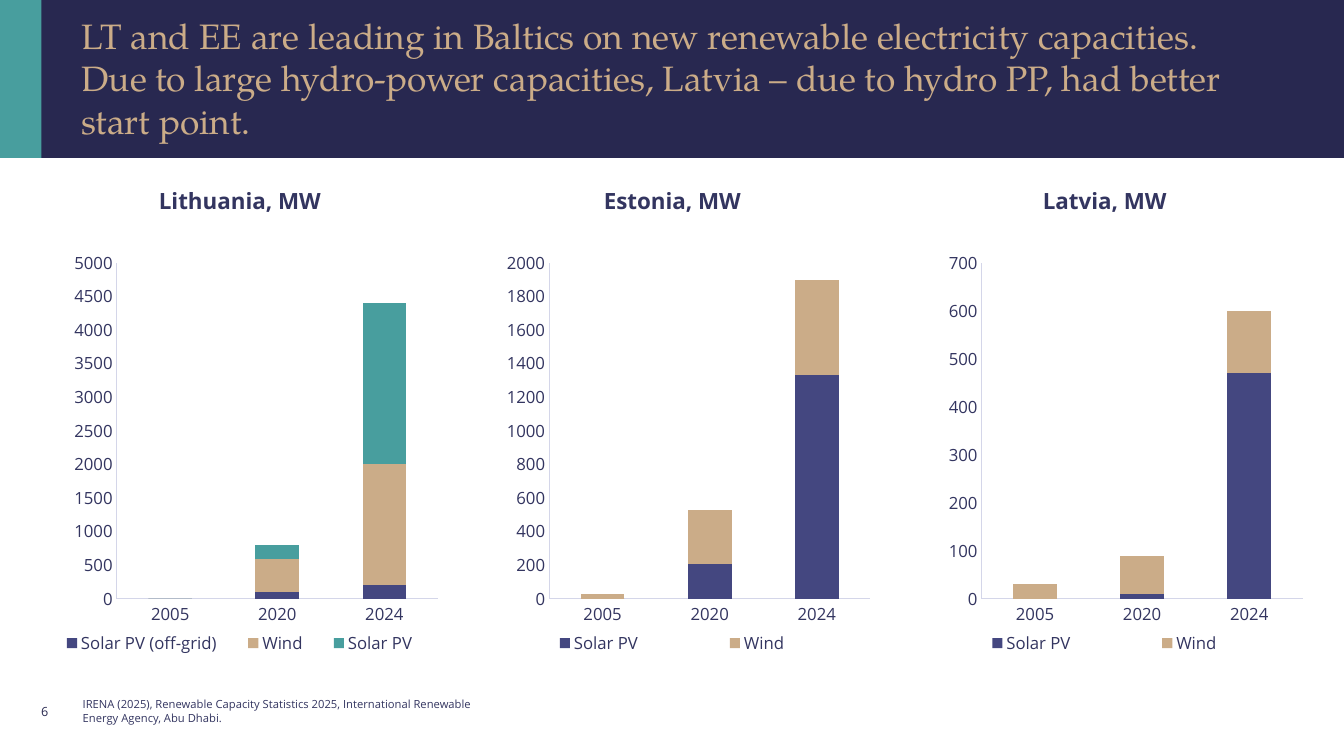
"""Build a slide comparing new renewable capacity in the three Baltic states."""
from lxml import etree
from pptx import Presentation
from pptx.chart.data import CategoryChartData
from pptx.dml.color import RGBColor
from pptx.enum.chart import XL_CHART_TYPE as ChartType, XL_LEGEND_POSITION as LegendPlace, XL_TICK_MARK as Tick
from pptx.enum.shapes import MSO_SHAPE as Preset
from pptx.enum.text import MSO_ANCHOR as Anchor, MSO_AUTO_SIZE as AutoSize, PP_ALIGN as Align
from pptx.oxml.ns import qn
from pptx.util import Pt

TITLE = ("LT and EE are leading in Baltics on new renewable electricity capacities. "
         "Due to large hydro-power capacities, Latvia – due to hydro PP, had better start point.")
SOURCE = ("IRENA (2025), Renewable Capacity Statistics 2025, "
          "International Renewable Energy Agency, Abu Dhabi.")
PAGE_NUMBER = "6"
YEARS = ("2005", "2020", "2024")
COUNTRIES = [
    ("Lithuania, MW", 5000, 500, [("Solar PV (off-grid)", (0, 100, 200)),
                                  ("Wind", (0, 500, 1800)),
                                  ("Solar PV", (0, 200, 2400))]),
    ("Estonia, MW", 2000, 200, [("Solar PV", (0, 210, 1330)), ("Wind", (30, 320, 570))]),
    ("Latvia, MW", 700, 100, [("Solar PV", (0, 10, 470)), ("Wind", (30, 80, 130))]),
]

NAVY, WHITE, TEAL, SAND = "282850", "FFFFFF", "489E9E", "CBAC88"
INK, AXIS = "333560", "D4D6E9"
SERIES_COLOURS = ("444780", SAND, TEAL)
BODY, SERIF = "Open Sans", "TeX Gyre Pagella"
WIDTH, HEIGHT, BAND = 960, 540, 113
LEFT, COLUMN, STEP = 29.5, 283.7, 308.9
PLOT_AREA = {"layoutTarget": "inner", "xMode": "edge", "yMode": "edge",
             "x": 0.19, "y": 0.04, "w": 0.81, "h": 0.8}
LEGEND_AREA = {"xMode": "edge", "yMode": "edge", "x": 0, "y": 0.9, "w": 1, "h": 0.09}


def colour(value):
    return RGBColor.from_string(value)


def apply(target, values):
    for name, value in values.items():
        setattr(target, name, value)


def set_font(font, size, ink=INK, face=BODY, bold=False):
    apply(font, {"size": Pt(size), "name": face, "bold": bold})
    font.color.rgb = colour(ink)


def put_text(box, words, size, spacing, align=Align.LEFT, anchor=Anchor.MIDDLE, **look):
    apply(box.text_frame, {"word_wrap": True, "auto_size": AutoSize.NONE, "vertical_anchor": anchor})
    para = box.text_frame.paragraphs[0]
    apply(para, {"alignment": align, "line_spacing": spacing, "space_before": Pt(0)})
    span = para.add_run()
    span.text = words
    set_font(span.font, size, **look)


def add_text(page, area, *args, **look):
    put_text(page.shapes.add_textbox(*map(Pt, area)), *args, **look)


def add_block(page, area, fill):
    block = page.shapes.add_shape(Preset.RECTANGLE, *map(Pt, area))
    block.shadow.inherit = False
    block.fill.solid()
    block.fill.fore_color.rgb = colour(fill)
    block.line.fill.background()


def place_part(chart, tag, position, settings):
    part = chart.element.find(".//" + qn(tag))
    for old in part.findall(qn("c:layout")):
        part.remove(old)
    layout = etree.Element(qn("c:layout"))
    part.insert(position, layout)
    manual = etree.SubElement(layout, qn("c:manualLayout"))
    for name, value in settings.items():
        etree.SubElement(manual, qn("c:" + name)).set("val", str(value))


def add_capacity_chart(page, left, top_value, unit, series):
    data = CategoryChartData(number_format="0")
    data.categories = YEARS
    for name, values in series:
        data.add_series(name, values)
    area = map(Pt, (left, 175.7, COLUMN, 300.2))
    chart = page.shapes.add_chart(ChartType.COLUMN_STACKED, *area, data).chart
    set_font(chart.font, 12)
    apply(chart, {"has_title": False, "has_legend": True})
    apply(chart.legend, {"position": LegendPlace.BOTTOM, "include_in_layout": False})
    set_font(chart.legend.font, 12)
    plot = chart.plots[0]
    apply(plot, {"gap_width": 146, "overlap": 100, "vary_by_categories": False})
    for bar, fill in zip(plot.series, SERIES_COLOURS):
        bar.format.fill.solid()
        bar.format.fill.fore_color.rgb = colour(fill)
    for axis in (chart.category_axis, chart.value_axis):
        apply(axis, {"has_major_gridlines": False, "major_tick_mark": Tick.NONE,
                     "minor_tick_mark": Tick.NONE})
        set_font(axis.tick_labels.font, 12)
        axis.format.line.width = Pt(0.75)
        axis.format.line.color.rgb = colour(AXIS)
    apply(chart.value_axis, {"minimum_scale": 0, "maximum_scale": top_value, "major_unit": unit})
    apply(chart.value_axis.tick_labels, {"number_format": "0", "number_format_is_linked": False})
    place_part(chart, "c:plotArea", 0, PLOT_AREA)
    place_part(chart, "c:legend", 1, LEGEND_AREA)


def main():
    deck = Presentation()
    apply(deck, {"slide_width": Pt(WIDTH), "slide_height": Pt(HEIGHT)})
    page = deck.slides.add_slide(deck.slide_layouts[5])
    page.background.fill.solid()
    page.background.fill.fore_color.rgb = colour(NAVY)
    add_block(page, (0, 0, LEFT, BAND), TEAL)
    add_block(page, (0, BAND, WIDTH, HEIGHT - BAND), WHITE)

    title = page.shapes.title
    apply(title, {"left": Pt(51), "top": Pt(14), "width": Pt(860), "height": Pt(83)})
    put_text(title, TITLE, 25.2, Pt(30.4), ink=SAND, face=SERIF)

    for index, (name, top_value, unit, series) in enumerate(COUNTRIES):
        left = LEFT + index * STEP
        add_text(page, (left, 130.3, COLUMN, 36), name, 16, 1.0,
                 align=Align.CENTER, anchor=Anchor.TOP, bold=True)
        add_capacity_chart(page, left, top_value, unit, series)

    add_text(page, (22.3, 494, 38, 29), PAGE_NUMBER, 9, 1.0, ink=NAVY)
    add_text(page, (52, 499.7, 308, 16.6), SOURCE, 8, 1.0)
    deck.save("out.pptx")


if __name__ == "__main__":
    main()
